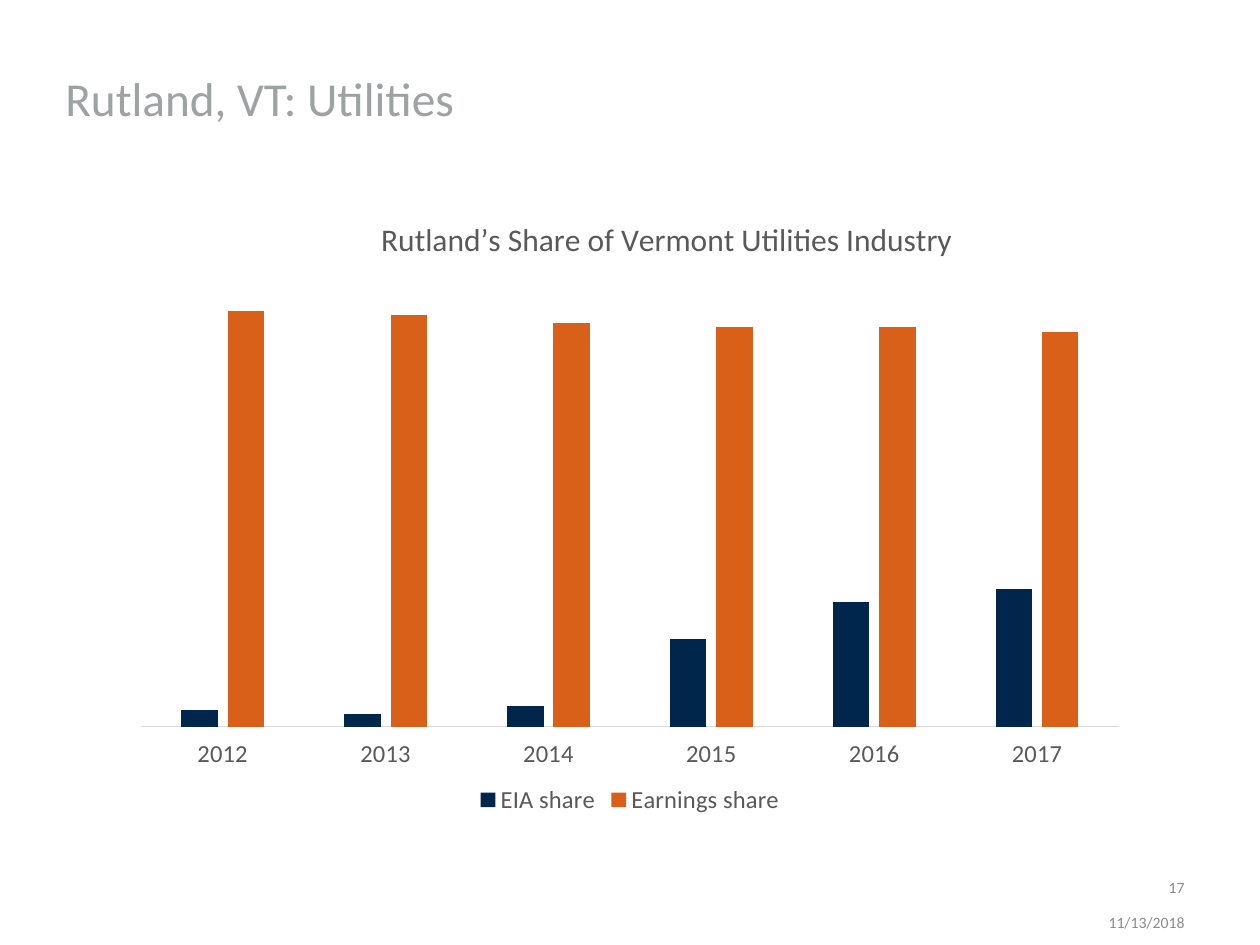
from lxml.etree import SubElement
from pptx import Presentation
from pptx.chart.data import CategoryChartData
from pptx.dml.color import RGBColor
from pptx.enum.chart import XL_CHART_TYPE as ChartType, XL_LEGEND_POSITION as LegendPosition
from pptx.enum.chart import XL_TICK_LABEL_POSITION as LabelPosition, XL_TICK_MARK as TickMark
from pptx.enum.text import MSO_ANCHOR as Anchor, PP_ALIGN as Align
from pptx.oxml.ns import qn
from pptx.util import Emu, Pt

PX = 914400 / 126
COLORS = {
    "title": "9EA2A2",
    "footer": "8C8C8C",
    "label": "595959",
    "axis": "D9D9D9",
    "navy": "00264C",
    "orange": "D86018",
}
YEARS = ["2012", "2013", "2014", "2015", "2016", "2017"]
SHARES = [
    ("EIA share", [4, 3, 5, 21, 30, 33], "navy"),
    ("Earnings share", [100, 99, 97, 96, 96, 95], "orange"),
]


def px(length):
    return Emu(round(length * PX))


def color(name):
    return RGBColor.from_string(COLORS[name])


class SlideBuilder:
    font_name = "Calibri"

    def __init__(self, slide):
        self.slide = slide

    def style_font(self, font, size, color_name):
        font.name = self.font_name
        font.size = Pt(size)
        font.bold = False
        font.color.rgb = color(color_name)

    def text(self, box, words, size, color_name, align=Align.LEFT, bottom=6):
        shape = self.slide.shapes.add_textbox(*map(px, box))
        frame = shape.text_frame
        frame.word_wrap = True
        frame.vertical_anchor = Anchor.MIDDLE
        frame.margin_bottom = px(bottom)
        paragraph = frame.paragraphs[0]
        paragraph.text = words
        paragraph.alignment = align
        self.style_font(paragraph.font, size, color_name)

    def place(self, parent, index, **fractions):
        for old in parent.findall(qn("c:layout")):
            parent.remove(old)
        layout = SubElement(parent, qn("c:layout"))
        parent.insert(index, layout)
        manual = SubElement(layout, qn("c:manualLayout"))
        if "w" in fractions:
            SubElement(manual, qn("c:layoutTarget"), val="inner")
        for axis in "xy":
            SubElement(manual, qn(f"c:{axis}Mode"), val="edge")
        for key, value in fractions.items():
            SubElement(manual, qn(f"c:{key}"), val=str(value))

    def column_chart(self, box, title, categories, series_rows):
        data = CategoryChartData()
        data.categories = categories
        for name, values, _ in series_rows:
            data.add_series(name, values)
        frame = self.slide.shapes.add_chart(ChartType.COLUMN_CLUSTERED, *map(px, box), data)
        chart = frame.chart
        self.style_font(chart.font, 14, "label")

        chart.has_title = True
        paragraph = chart.chart_title.text_frame.paragraphs[0]
        paragraph.text = title
        self.style_font(paragraph.font, 18, "label")
        self.place(chart.element.find(".//" + qn("c:title")), 1, x=0.25, y=0.02)
        self.place(chart.element.find(".//" + qn("c:plotArea")), 0, x=0.02, y=0.14, w=0.96, h=0.71)

        chart.has_legend = True
        chart.legend.position = LegendPosition.BOTTOM
        chart.legend.include_in_layout = False
        self.style_font(chart.legend.font, 14, "label")

        plot = chart.plots[0]
        plot.gap_width = 219
        plot.overlap = -27
        plot.vary_by_categories = False
        for series, (_, _, fill_name) in zip(plot.series, series_rows):
            series.invert_if_negative = False
            series.format.fill.solid()
            series.format.fill.fore_color.rgb = color(fill_name)

        category_axis = chart.category_axis
        category_axis.major_tick_mark = TickMark.NONE
        category_axis.tick_label_position = LabelPosition.LOW
        category_axis.format.line.color.rgb = color("axis")
        category_axis.format.line.width = Pt(0.75)
        self.style_font(category_axis.tick_labels.font, 14, "label")

        value_axis = chart.value_axis
        value_axis.visible = False
        value_axis.has_major_gridlines = False
        value_axis.minimum_scale = 0
        value_axis.maximum_scale = 106
        value_axis.major_unit = 18


def main():
    presentation = Presentation()
    presentation.slide_width = px(1260)
    presentation.slide_height = px(945)
    builder = SlideBuilder(presentation.slides.add_slide(presentation.slide_layouts[6]))
    builder.text((53, 32, 955, 126), "Rutland, VT: Utilities", 27, "title", bottom=0)
    builder.text((1061, 911, 136, 23), "11/13/2018", 9, "footer", Align.RIGHT)
    builder.text((1124, 873, 73, 28), "17", 9, "footer", Align.RIGHT)
    builder.column_chart(
        (121, 199, 1018, 621), "Rutland’s Share of Vermont Utilities Industry", YEARS, SHARES
    )
    presentation.save("out.pptx")


if __name__ == "__main__":
    main()
